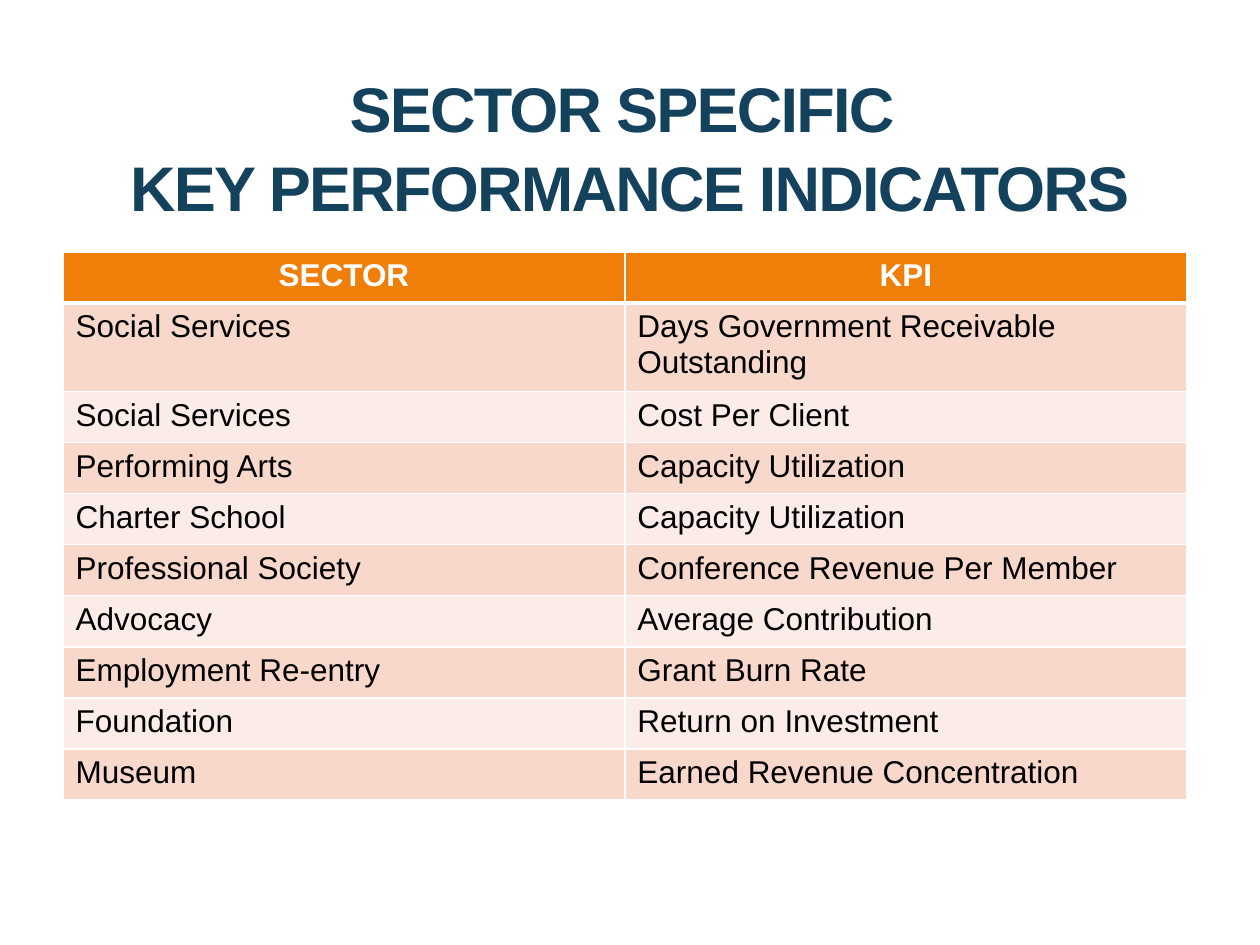
from dataclasses import dataclass

from lxml import etree
from pptx import Presentation
from pptx.dml.color import RGBColor
from pptx.enum.text import MSO_ANCHOR, PP_ALIGN
from pptx.oxml.ns import qn
from pptx.util import Pt

CENTER, LEFT = PP_ALIGN.CENTER, PP_ALIGN.LEFT
MIDDLE = MSO_ANCHOR.MIDDLE
NAVY, ORANGE, WHITE, BLACK = "14425D", "F07F09", "FFFFFF", "000000"
BANDS = ("F9D8CC", "FCECE7")
COLUMN_WIDTH, ROW_HEIGHT = Pt(321.1), Pt(29.2)
THIN_RULE, HEADER_RULE = Pt(1), Pt(3)


@dataclass(frozen=True)
class RowStyle:
    fill: str
    ink: str
    bold: bool
    align: PP_ALIGN
    top_rule: int
    bottom_rule: int


@dataclass(frozen=True)
class Indicator:
    sector: str
    kpi: str


HEADING = Indicator("SECTOR", "KPI")
INDICATORS = (
    Indicator("Social Services", "Days Government Receivable Outstanding"),
    Indicator("Social Services", "Cost Per Client"),
    Indicator("Performing Arts", "Capacity Utilization"),
    Indicator("Charter School", "Capacity Utilization"),
    Indicator("Professional Society", "Conference Revenue Per Member"),
    Indicator("Advocacy", "Average Contribution"),
    Indicator("Employment Re-entry", "Grant Burn Rate"),
    Indicator("Foundation", "Return on Investment"),
    Indicator("Museum", "Earned Revenue Concentration"),
)


def color(hex_value: str) -> RGBColor:
    return RGBColor.from_string(hex_value)


def apply(target, formats: dict) -> None:
    for attribute, value in formats.items():
        setattr(target, attribute, value)


def style_font(font, size: int, ink: str, bold: bool) -> None:
    apply(font, {"name": "Arial", "size": Pt(size), "bold": bold})
    font.color.rgb = color(ink)


def add_rule(cell, side: str, width: int) -> None:
    properties = cell._tc.get_or_add_tcPr()
    rule = etree.SubElement(properties, qn(f"a:{side}"), w=str(width))
    fill = etree.SubElement(rule, qn("a:solidFill"))
    etree.SubElement(fill, qn("a:srgbClr"), val=WHITE)


def fill_cell(cell, wording: str, style: RowStyle) -> None:
    rules = {"lnL": THIN_RULE, "lnR": THIN_RULE,
             "lnT": style.top_rule, "lnB": style.bottom_rule}
    for side, width in rules.items():
        add_rule(cell, side, width)
    cell.fill.solid()
    cell.fill.fore_color.rgb = color(style.fill)
    paragraph = cell.text_frame.paragraphs[0]
    paragraph.alignment = style.align
    run = paragraph.add_run()
    run.text = wording
    style_font(run.font, 18, style.ink, style.bold)


def row_style(index: int) -> RowStyle:
    if index == 0:
        return RowStyle(ORANGE, WHITE, True, CENTER, THIN_RULE, HEADER_RULE)
    top_rule = HEADER_RULE if index == 1 else THIN_RULE
    return RowStyle(BANDS[(index - 1) % 2], BLACK, False, LEFT, top_rule, THIN_RULE)


def add_title(slide) -> None:
    title = slide.shapes.add_textbox(Pt(12), Pt(42), Pt(696), Pt(78))
    frame = title.text_frame
    apply(frame, {"word_wrap": True, "vertical_anchor": MIDDLE,
                  "margin_top": Pt(4), "margin_bottom": Pt(0)})
    paragraph = frame.paragraphs[0]
    paragraph.text = "SECTOR SPECIFIC \vKEY PERFORMANCE INDICATORS"
    apply(paragraph, {"alignment": CENTER, "line_spacing": 1.04})
    for run in paragraph.runs:
        style_font(run.font, 36, NAVY, True)
        run.font._element.set("spc", "-100")


def add_indicator_table(slide) -> None:
    rows = (HEADING, *INDICATORS)
    table = slide.shapes.add_table(
        len(rows), 2, Pt(36), Pt(144), COLUMN_WIDTH * 2, ROW_HEIGHT * len(rows)
    ).table
    for column in table.columns:
        column.width = COLUMN_WIDTH
    for index, indicator in enumerate(rows):
        table.rows[index].height = ROW_HEIGHT
        style = row_style(index)
        fill_cell(table.cell(index, 0), indicator.sector, style)
        fill_cell(table.cell(index, 1), indicator.kpi, style)


def main() -> None:
    """Build the slide of key performance indicators by sector."""
    deck = Presentation()
    apply(deck, {"slide_width": Pt(720), "slide_height": Pt(540)})
    slide = deck.slides.add_slide(deck.slide_layouts[6])
    add_title(slide)
    add_indicator_table(slide)
    deck.save("out.pptx")


if __name__ == "__main__":
    main()
